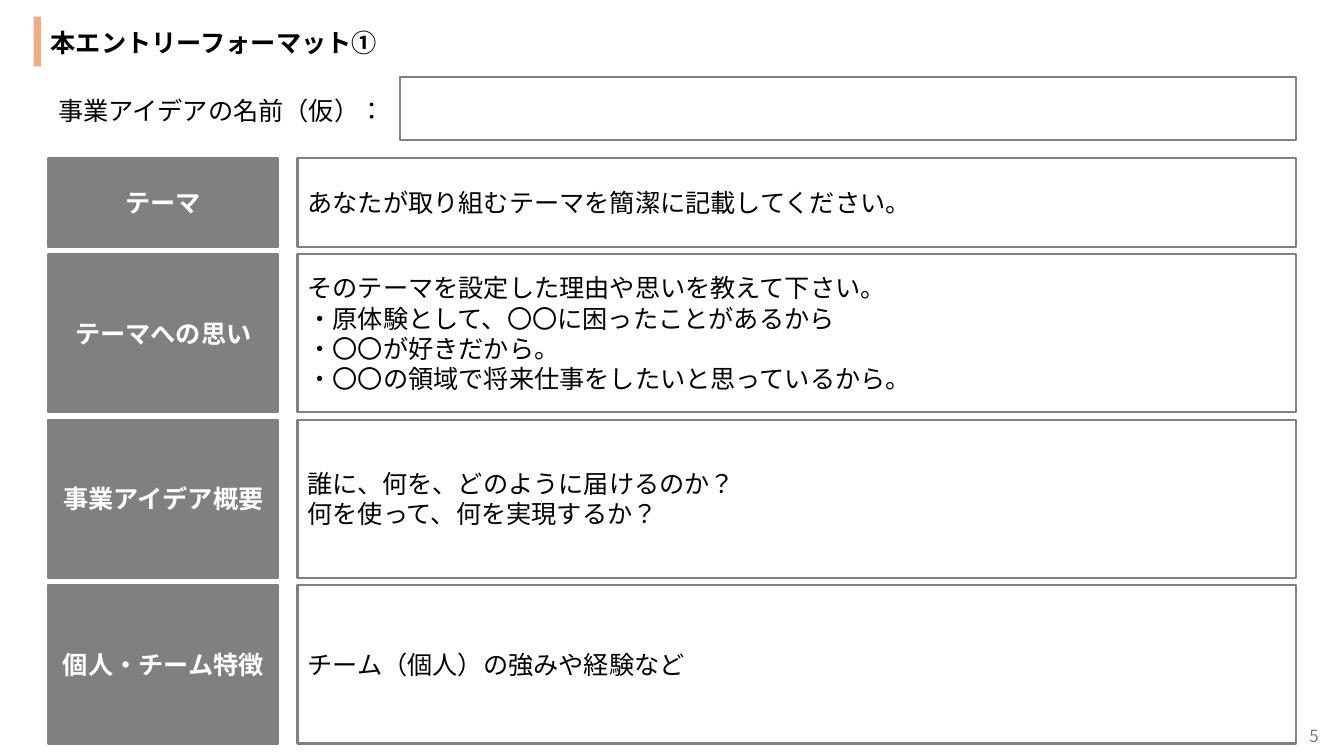
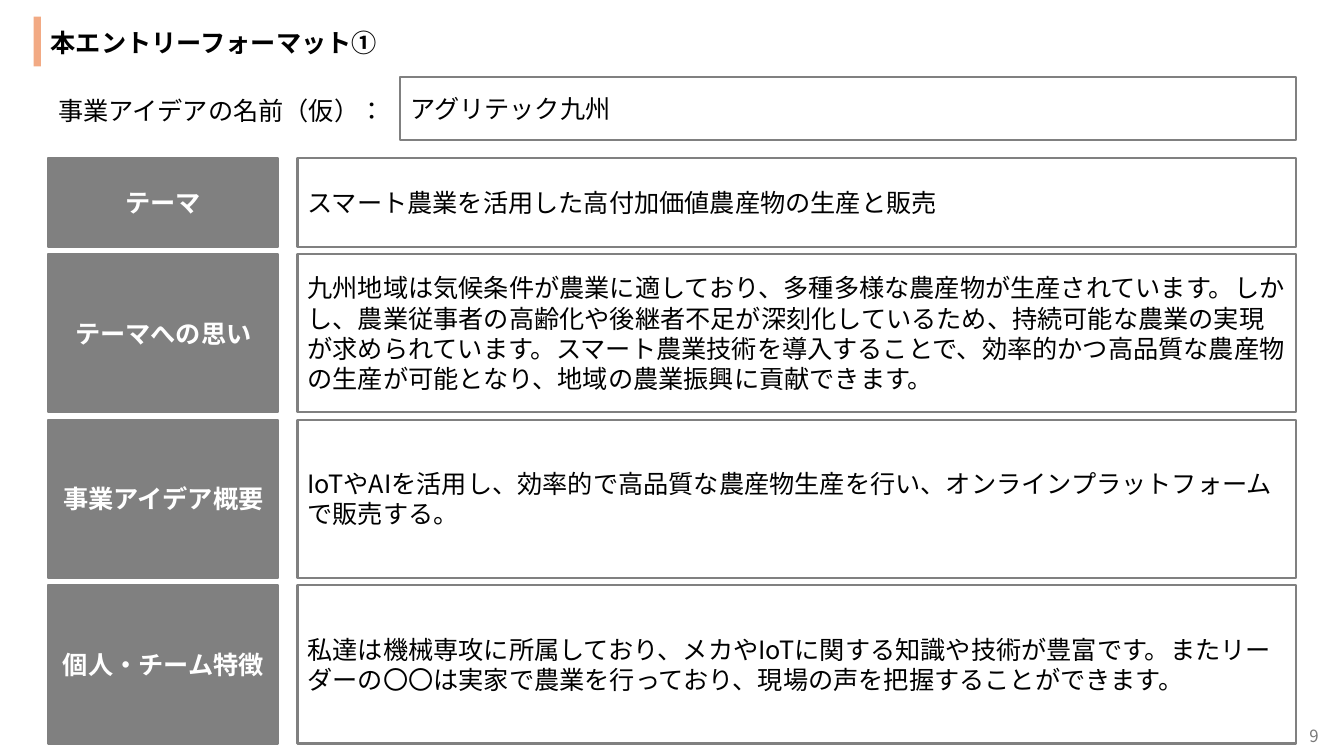
from dataclasses import dataclass

from lxml import etree
from pptx import Presentation
from pptx.dml.color import RGBColor
from pptx.enum import lang, shapes, text
from pptx.oxml import ns
from pptx.util import Pt

TITLE = "本エントリーフォーマット①"
NAME_CAPTION = "事業アイデアの名前（仮）："
ROWS = [
    ("テーマ", 63.2),
    ("テーマへの思い", 113),
    ("事業アイデア概要", 113),
    ("個人・チーム特徴", 113),
]
ENTRIES = [
    {
        "number": "5",
        "name": "",
        "answers": [
            ["あなたが取り組むテーマを簡潔に記載してください。"],
            [
                "そのテーマを設定した理由や思いを教えて下さい。",
                "・原体験として、〇〇に困ったことがあるから",
                "・〇〇が好きだから。",
                "・〇〇の領域で将来仕事をしたいと思っているから。",
            ],
            ["誰に、何を、どのように届けるのか？", "何を使って、何を実現するか？"],
            ["チーム（個人）の強みや経験など"],
        ],
    },
    {
        "number": "9",
        "name": "アグリテック九州",
        "answers": [
            ["スマート農業を活用した高付加価値農産物の生産と販売"],
            [
                "九州地域は気候条件が農業に適しており、多種多様な農産物が生産されています。"
                "しかし、農業従事者の高齢化や後継者不足が深刻化しているため、"
                "持続可能な農業の実現が求められています。"
                "スマート農業技術を導入することで、効率的かつ高品質な農産物の生産が可能となり、"
                "地域の農業振興に貢献できます。"
            ],
            [
                "IoTやAIを活用し、効率的で高品質な農産物生産を行い、"
                "オンラインプラットフォームで販売する。"
            ],
            [
                "私達は機械専攻に所属しており、メカやIoTに関する知識や技術が豊富です。"
                "またリーダーの〇〇は実家で農業を行っており、現場の声を把握することができます。"
            ],
        ],
    },
]


@dataclass(frozen=True)
class Theme:
    font: str = "Noto Sans CJK JP"
    body_size: float = 18
    number_size: float = 12
    border: float = 1.5
    ink: str = "000000"
    paper: str = "FFFFFF"
    gray: str = "808080"
    number: str = "797979"
    accent: str = "F2AA84"


THEME = Theme()
LEFT, RIGHT = 34.5, 926
LABEL_WIDTH, ANSWER_LEFT, NAME_LEFT = 164.2, 212.5, 285.9
ROWS_TOP, ROW_GAP = 113, 5.3


def write(box, lines, color=THEME.ink, size=THEME.body_size, bold=False,
          align=text.PP_ALIGN.LEFT, anchor=text.MSO_ANCHOR.MIDDLE, wrap=True):
    frame = box.text_frame
    frame.word_wrap = wrap
    frame.vertical_anchor = anchor
    for index, line in enumerate(lines):
        para = frame.add_paragraph() if index else frame.paragraphs[0]
        para.alignment = align
        span = para.add_run()
        span.text = line
        font = span.font
        font.name, font.size, font.bold = THEME.font, Pt(size), bold
        font.color.rgb = RGBColor.from_string(color)
        font.language_id = lang.MSO_LANGUAGE_ID.JAPANESE
        etree.SubElement(span._r.get_or_add_rPr(), ns.qn("a:ea"), typeface=THEME.font)


def add_text(page, line, left, top, width, height, **style):
    box = page.shapes.add_textbox(Pt(left), Pt(top), Pt(width), Pt(height))
    write(box, [line], **style)


def add_panel(page, left, top, width, height, fill, line=None):
    panel = page.shapes.add_shape(
        shapes.MSO_SHAPE.RECTANGLE, Pt(left), Pt(top), Pt(width), Pt(height))
    panel.shadow.inherit = False
    panel.fill.solid()
    panel.fill.fore_color.rgb = RGBColor.from_string(fill)
    if line:
        panel.line.color.rgb = RGBColor.from_string(line)
        panel.line.width = Pt(THEME.border)
    else:
        panel.line.fill.background()
    return panel


def add_frame(page, number):
    top = text.MSO_ANCHOR.TOP
    add_text(page, TITLE, 29.2, 15.8, 251.3, 29, bold=True, anchor=top, wrap=False)
    add_panel(page, 24, 12, 5.3, 35.5, THEME.accent)
    add_text(page, NAME_CAPTION, LEFT, 64.3, 251.3, 29, anchor=top)
    add_text(page, number, 733, 511, 216, 29, color=THEME.number,
             size=THEME.number_size, align=text.PP_ALIGN.RIGHT)


def add_entry(deck, entry):
    page = deck.slides.add_slide(deck.slide_layouts[6])
    add_frame(page, entry["number"])
    name_box = add_panel(page, NAME_LEFT, 54.7, RIGHT - NAME_LEFT, 45.5,
                         THEME.paper, THEME.gray)
    if entry["name"]:
        write(name_box, [entry["name"]])
    top = ROWS_TOP
    for (label, height), answer in zip(ROWS, entry["answers"]):
        label_box = add_panel(page, LEFT, top, LABEL_WIDTH, height, THEME.gray, THEME.gray)
        write(label_box, [label], color=THEME.paper, bold=True, align=text.PP_ALIGN.CENTER)
        answer_box = add_panel(page, ANSWER_LEFT, top, RIGHT - ANSWER_LEFT, height,
                               THEME.paper, THEME.gray)
        write(answer_box, answer)
        top += height + ROW_GAP


def main():
    deck = Presentation()
    deck.slide_width, deck.slide_height = Pt(960), Pt(540)
    for entry in ENTRIES:
        add_entry(deck, entry)
    deck.save("out.pptx")


if __name__ == "__main__":
    main()
